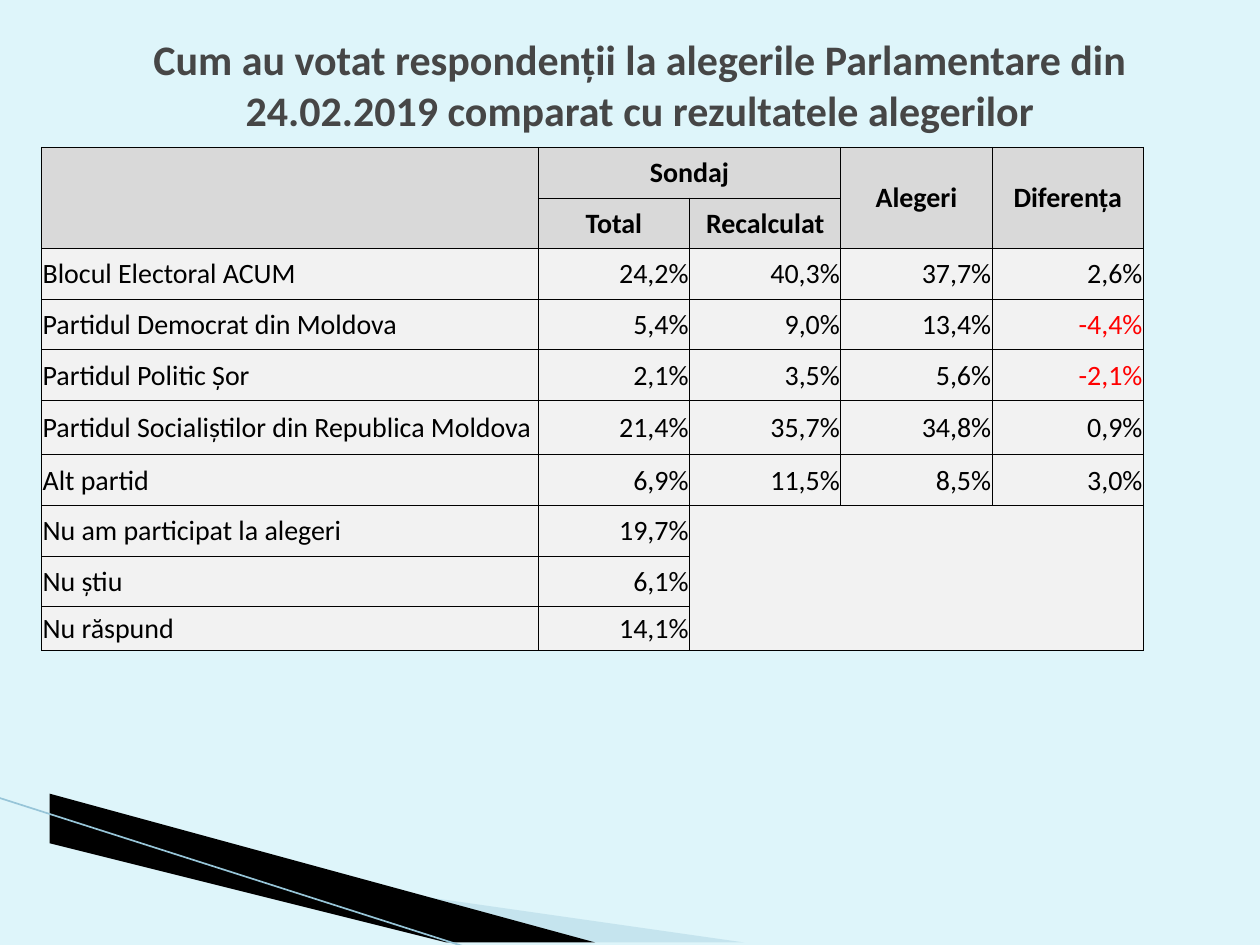
from lxml.etree import SubElement
from pptx import Presentation
from pptx.dml.color import RGBColor
from pptx.enum.shapes import MSO_CONNECTOR
from pptx.enum.text import MSO_ANCHOR, PP_ALIGN
from pptx.oxml.ns import qn
from pptx.util import Cm, Pt

FONT = "Calibri"
COLOURS = {
    "background": "DEF5FA", "title": "464646", "text": "000000",
    "negative": "FF0000", "header": "D9D9D9", "body": "F2F2F2",
    "border": "000000", "pale": "A0CBDC", "dark": "000000", "edge": "97C5D8",
}

TITLE = ("Cum au votat respondenții la alegerile Parlamentare din "
         "24.02.2019 comparat cu rezultatele alegerilor")
HEADERS = [
    ["", "Sondaj", "", "Alegeri", "Diferența"],
    ["", "Total", "Recalculat", "", ""],
]
RESULTS = [
    ["Blocul Electoral ACUM", "24,2%", "40,3%", "37,7%", "2,6%"],
    ["Partidul Democrat din Moldova", "5,4%", "9,0%", "13,4%", "-4,4%"],
    ["Partidul Politic Șor", "2,1%", "3,5%", "5,6%", "-2,1%"],
    ["Partidul Socialiștilor din Republica Moldova", "21,4%", "35,7%", "34,8%", "0,9%"],
    ["Alt partid", "6,9%", "11,5%", "8,5%", "3,0%"],
    ["Nu am participat la alegeri", "19,7%", "", "", ""],
    ["Nu știu", "6,1%", "", "", ""],
    ["Nu răspund", "14,1%", "", "", ""],
]
# First and last cell of each merged block, as (row, column)
MERGES = [((0, 0), (1, 0)), ((0, 1), (0, 2)), ((0, 3), (1, 3)),
          ((0, 4), (1, 4)), ((7, 2), (9, 4))]
COLUMN_WIDTHS = [10.01] + [3.05] * 4
ROW_HEIGHTS = [1.02] * 5 + [1.1] + [1.02] * 3 + [0.89]

# Corner wedges: colour, opacity in percent, outline in cm
WEDGES = [
    ("pale", 40, [(1.4, 16.54), (15.11, 19.08), (11.58, 19.08), (1.4, 16.51)]),
    ("dark", 100, [(1.35, 16.48), (11.61, 19.08), (9.45, 19.1), (1.37, 16.51)]),
]
EDGE = (-0.03, 16.08, 9.42, 19.1)


def rgb(name):
    return RGBColor.from_string(COLOURS[name])


def add_run(paragraph, text, size, colour, bold):
    run = paragraph.add_run()
    run.text = text
    run.font.name = FONT
    run.font.size = Pt(size)
    run.font.bold = bold
    run.font.color.rgb = rgb(colour)


def add_corner(slide):
    for colour, opacity, (start, *others) in WEDGES:
        builder = slide.shapes.build_freeform(*start, scale=Cm(1))
        builder.add_line_segments(others, close=True)
        wedge = builder.convert_to_shape()
        wedge.shadow.inherit = False
        wedge.fill.solid()
        wedge.fill.fore_color.rgb = rgb(colour)
        wedge.line.fill.background()
        if opacity < 100:
            colour_element = wedge.fill._xPr.find(qn("a:solidFill"))[0]
            SubElement(colour_element, qn("a:alpha"), val=str(opacity * 1000))
    edge = slide.shapes.add_connector(MSO_CONNECTOR.STRAIGHT, *map(Cm, EDGE))
    edge.line.color.rgb = rgb("edge")
    edge.line.width = Pt(0.95)
    SubElement(edge._element.spPr, qn("a:effectLst"))


def add_title(slide):
    title = slide.shapes.title
    title.left, title.top, title.width, title.height = map(Cm, (1.47, 0.64, 22.86, 2.11))
    frame = title.text_frame
    frame.word_wrap = True
    frame.vertical_anchor = MSO_ANCHOR.MIDDLE
    heading = frame.paragraphs[0]
    heading.alignment = PP_ALIGN.CENTER
    add_run(heading, TITLE, 24, "title", True)


def add_borders(cell):
    properties = cell._tc.get_or_add_tcPr()
    for side in ("lnL", "lnR", "lnT", "lnB"):
        border = SubElement(properties, qn(f"a:{side}"), w=str(Pt(0.5)))
        fill = SubElement(border, qn("a:solidFill"))
        SubElement(fill, qn("a:srgbClr"), val=COLOURS["border"])


def format_cell(cell, text, is_header, is_label):
    add_borders(cell)
    cell.fill.solid()
    cell.fill.fore_color.rgb = rgb("header" if is_header else "body")
    cell.margin_left = cell.margin_right = cell.margin_top = Cm(0.02)
    cell.margin_bottom = 0
    cell.vertical_anchor = MSO_ANCHOR.MIDDLE
    if not text:
        return
    paragraph = cell.text_frame.paragraphs[0]
    if is_header:
        paragraph.alignment = PP_ALIGN.CENTER
    else:
        paragraph.alignment = PP_ALIGN.LEFT if is_label else PP_ALIGN.RIGHT
    colour = "negative" if text.startswith("-") else "text"
    add_run(paragraph, text, 16, colour, is_header)


def add_results(slide):
    rows = HEADERS + RESULTS
    table = slide.shapes.add_table(
        len(rows), len(COLUMN_WIDTHS), Cm(0.84), Cm(2.97),
        Cm(sum(COLUMN_WIDTHS)), Cm(sum(ROW_HEIGHTS))).table
    for column, width in zip(table.columns, COLUMN_WIDTHS):
        column.width = Cm(width)
    for row, height in zip(table.rows, ROW_HEIGHTS):
        row.height = Cm(height)
    for r, texts in enumerate(rows):
        for c, text in enumerate(texts):
            format_cell(table.cell(r, c), text, r < len(HEADERS), c == 0)
    for first, last in MERGES:
        table.cell(*first).merge(table.cell(*last))


def main():
    deck = Presentation()
    deck.slide_width, deck.slide_height = Cm(25.4), Cm(19.05)
    slide = deck.slides.add_slide(deck.slide_layouts[5])
    slide.background.fill.solid()
    slide.background.fill.fore_color.rgb = rgb("background")
    add_corner(slide)
    add_title(slide)
    add_results(slide)
    deck.save("out.pptx")


if __name__ == "__main__":
    main()
